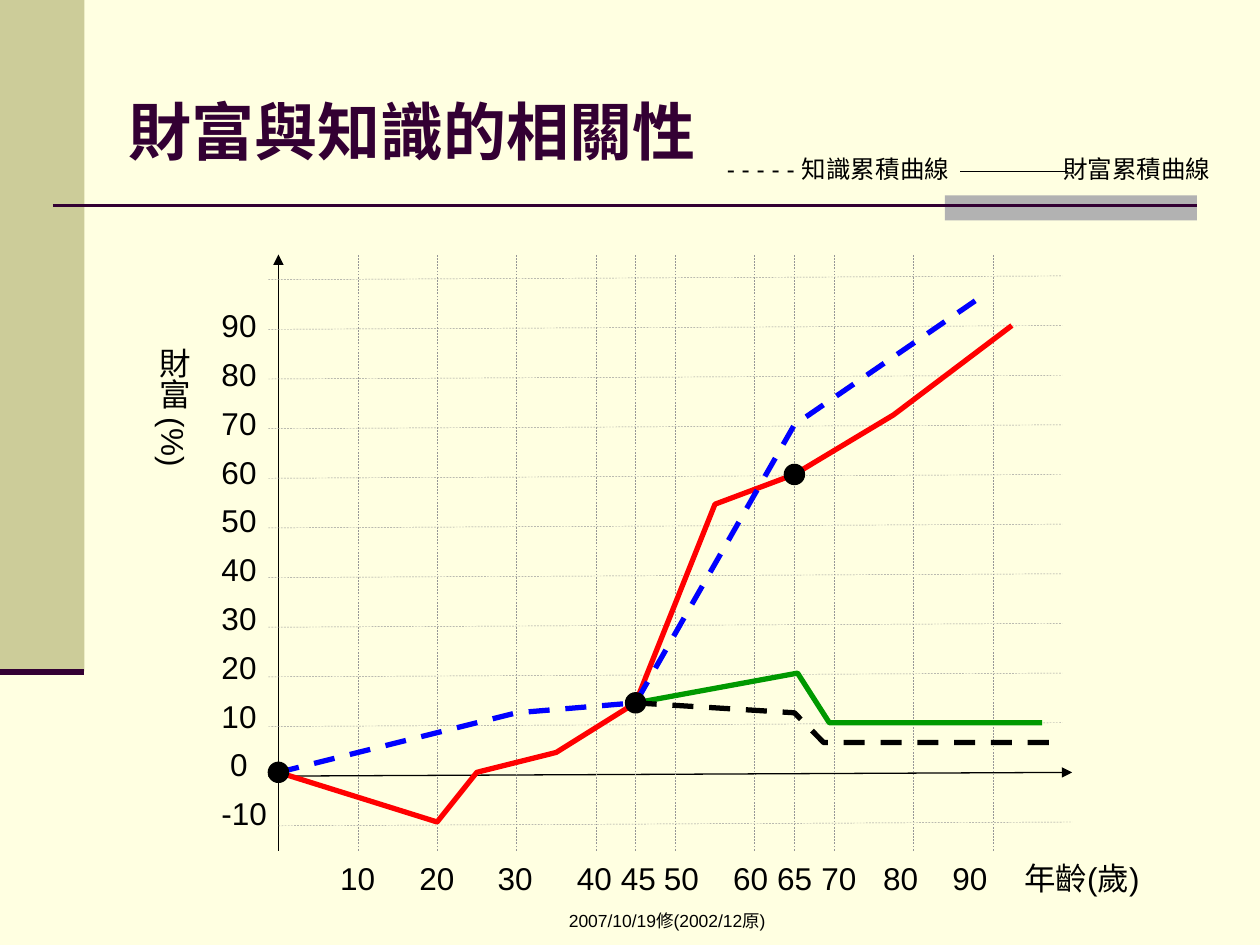
from dataclasses import dataclass

from lxml.etree import SubElement
from pptx import Presentation
from pptx.dml.color import RGBColor
from pptx.enum.dml import MSO_LINE
from pptx.enum.lang import MSO_LANGUAGE_ID as Language
from pptx.enum.shapes import MSO_CONNECTOR, MSO_SHAPE
from pptx.enum.text import MSO_ANCHOR, PP_ALIGN
from pptx.oxml.ns import qn
from pptx.util import Inches, Pt


@dataclass(frozen=True)
class Theme:
    """Colours, fonts and type sizes of the slide."""
    background: str = "FFFFE1"
    band: str = "CCCC99"
    bar: str = "B2B2B2"
    accent: str = "330033"
    ink: str = "000000"
    grid: str = "969696"
    wealth: str = "FF0000"
    knowledge: str = "0000FF"
    steady: str = "009900"
    body_font: str = "Arial"
    title_font: str = "Times New Roman"
    title_size: int = 36
    label_size: int = 18
    legend_size: int = 14
    footer_size: int = 10


THEME = Theme()
ORIGIN_X, ORIGIN_Y = 2.21, 6.13
INCHES_PER_YEAR, INCHES_PER_PERCENT = 0.063, 0.0394
GRID_TOP, GRID_BOTTOM = 2.02, 6.75
TILT = 0.03

GRID_AGES = [10, 20, 30, 40, 45, 50, 60, 65, 70, 80, 90]
AGE_TABS = [0.63, 1.25, 1.88, 2.23, 2.57, 3.12, 3.47, 3.82, 4.31, 4.86]
PERCENT_LABELS = [str(value) for value in range(90, 0, -10)] + [" 0", "-10"]
MILESTONES = [(0, 0), (45, 14), (65, 60)]
CURVES = [
    (THEME.wealth, None, [(0, 0), (20, -10), (25, 0), (35, 4), (45, 14),
                          (55, 54), (65, 60), (77.5, 72), (92.4, 90)]),
    (THEME.steady, None, [(45, 14), (65.4, 20), (69.4, 10), (96.2, 10)]),
    (THEME.knowledge, MSO_LINE.DASH, [(0, 0), (30, 12), (45, 14), (65, 70), (88.7, 96)]),
    (THEME.ink, MSO_LINE.DASH, [(45, 14), (65, 12), (68.7, 6), (98.7, 6)]),
]


def set_all(target, formats):
    """Set every attribute named in formats on target."""
    for name, value in formats.items():
        setattr(target, name, value)


def age_x(age):
    """Return the horizontal place of an age in inches."""
    return ORIGIN_X + age * INCHES_PER_YEAR


def percent_y(percent):
    """Return the vertical place of a percentage in inches."""
    return ORIGIN_Y - percent * INCHES_PER_PERCENT


def style_line(line, color, width, dash=None):
    """Give a line its colour, width and dash."""
    line.color.rgb = RGBColor.from_string(color)
    set_all(line, {"width": Pt(width), "dash_style": dash})


def add_line(slide, start, end, color, width, dash=None, arrow=False):
    """Draw a straight connector, with an arrowhead at its end if asked."""
    ends = [Inches(value) for value in (*start, *end)]
    connector = slide.shapes.add_connector(MSO_CONNECTOR.STRAIGHT, *ends)
    style_line(connector.line, color, width, dash)
    properties = connector.element.spPr
    if arrow:
        SubElement(properties.find(qn("a:ln")), qn("a:tailEnd"), type="triangle")
    SubElement(properties, qn("a:effectLst"))


def add_filled(slide, kind, box, color):
    """Draw a preset shape with a plain fill."""
    shape = slide.shapes.add_shape(kind, *[Inches(value) for value in box])
    shape.shadow.inherit = False
    shape.fill.solid()
    shape.fill.fore_color.rgb = RGBColor.from_string(color)
    shape.line.fill.background()
    return shape


def add_text(slide, box, lines, size, font=THEME.body_font, color=THEME.ink, bold=False,
             align=PP_ALIGN.LEFT, anchor=MSO_ANCHOR.TOP, gap=0, tabs=(), vertical=None):
    """Add a text box with one paragraph for each line."""
    shape = slide.shapes.add_textbox(*[Inches(value) for value in box])
    frame = shape.text_frame
    set_all(frame, {"word_wrap": True, "vertical_anchor": anchor})
    if vertical:
        shape.element.txBody.bodyPr.set("vert", vertical)
    frame.text = "\n".join(lines)
    for index, paragraph in enumerate(frame.paragraphs):
        set_all(paragraph, {"alignment": align, "space_before": Pt(gap if index else 0)})
        if tabs:
            stops = SubElement(paragraph._p.get_or_add_pPr(), qn("a:tabLst"))
            for tab in tabs:
                SubElement(stops, qn("a:tab"), pos=str(Inches(tab)), algn="l")
        for run in paragraph.runs:
            set_all(run.font, {"name": font, "size": Pt(size), "bold": bold,
                               "language_id": Language.TRADITIONAL_CHINESE})
            run.font.color.rgb = RGBColor.from_string(color)


def add_curve(slide, color, dash, points):
    """Draw an open curve through points of age and percentage."""
    places = [(Inches(age_x(age)), Inches(percent_y(percent))) for age, percent in points]
    builder = slide.shapes.build_freeform(*places[0])
    builder.add_line_segments(places[1:], close=False)
    shape = builder.convert_to_shape()
    shape.shadow.inherit = False
    shape.fill.background()
    style_line(shape.line, color, 3, dash)


def add_milestone(slide, age, percent):
    """Mark a point of age and percentage with a dot."""
    size = 0.16
    box = (age_x(age) - size / 2, percent_y(percent) - size / 2, size, size)
    dot = add_filled(slide, MSO_SHAPE.OVAL, box, THEME.ink)
    style_line(dot.line, THEME.ink, 0.75)


def add_frame(slide):
    """Draw the side band, the title rule and the title."""
    add_filled(slide, MSO_SHAPE.RECTANGLE, (0, 0, 0.67, 5.33), THEME.band)
    add_filled(slide, MSO_SHAPE.RECTANGLE, (7.5, 1.55, 2, 0.2), THEME.bar)
    add_line(slide, (0.42, 1.63), (9.5, 1.63), THEME.accent, 1.5)
    add_line(slide, (0, 5.33), (0.67, 5.33), THEME.accent, 3.5)
    add_text(slide, (3.67, 7.17, 3.25, 0.17), ["2007/10/19修(2002/12原)"],
             THEME.footer_size, align=PP_ALIGN.CENTER)
    add_text(slide, (0.92, 0.74, 5.23, 0.59), ["財富與知識的相關性"], THEME.title_size,
             font=THEME.title_font, color=THEME.accent, bold=True, anchor=MSO_ANCHOR.MIDDLE)


def add_axes(slide):
    """Draw the grid and both axes."""
    add_line(slide, (ORIGIN_X, GRID_BOTTOM), (ORIGIN_X, GRID_TOP), THEME.ink, 0.75, arrow=True)
    add_line(slide, (2.13, ORIGIN_Y + TILT), (8.51, ORIGIN_Y), THEME.ink, 0.75, arrow=True)
    for percent in range(-10, 101, 10):
        if percent:
            left, right = (2.13, 8.43) if percent > 0 else (ORIGIN_X, 8.51)
            y = percent_y(percent)
            add_line(slide, (left, y + TILT), (right, y), THEME.grid, 0.25, MSO_LINE.DASH)
    for age in GRID_AGES:
        x = age_x(age)
        add_line(slide, (x, GRID_BOTTOM), (x, GRID_TOP), THEME.grid, 0.25, MSO_LINE.DASH)


def add_labels(slide):
    """Write the axis labels and the legend."""
    size = THEME.label_size
    add_text(slide, (1.66, 2.38, 0.63, 4.31), PERCENT_LABELS, size, gap=6.3)
    add_text(slide, (2.6, 6.77, 5.59, 0.4), ["\t".join(map(str, GRID_AGES))], size, tabs=AGE_TABS)
    add_text(slide, (8.03, 6.77, 1.18, 0.4), ["年齡(歲)"], size)
    add_text(slide, (1.08, 2.66, 0.5, 1.58), ["財富 (%)"], size, vertical="eaVert")
    add_text(slide, (5.67, 1.17, 4.33, 0.33), ["- - - - - 知識累積曲線\t財富累積曲線"],
             THEME.legend_size, tabs=[2.67])
    add_line(slide, (7.62, 1.36), (8.48, 1.36), THEME.ink, 0.75)


def main():
    """Build the slide and save it."""
    presentation = Presentation()
    set_all(presentation, {"slide_width": Inches(10), "slide_height": Inches(7.5)})
    slide = presentation.slides.add_slide(presentation.slide_layouts[6])
    slide.background.fill.solid()
    slide.background.fill.fore_color.rgb = RGBColor.from_string(THEME.background)
    add_frame(slide)
    add_axes(slide)
    add_labels(slide)
    for color, dash, points in CURVES:
        add_curve(slide, color, dash, points)
    for age, percent in MILESTONES:
        add_milestone(slide, age, percent)
    presentation.save("out.pptx")


if __name__ == "__main__":
    main()
